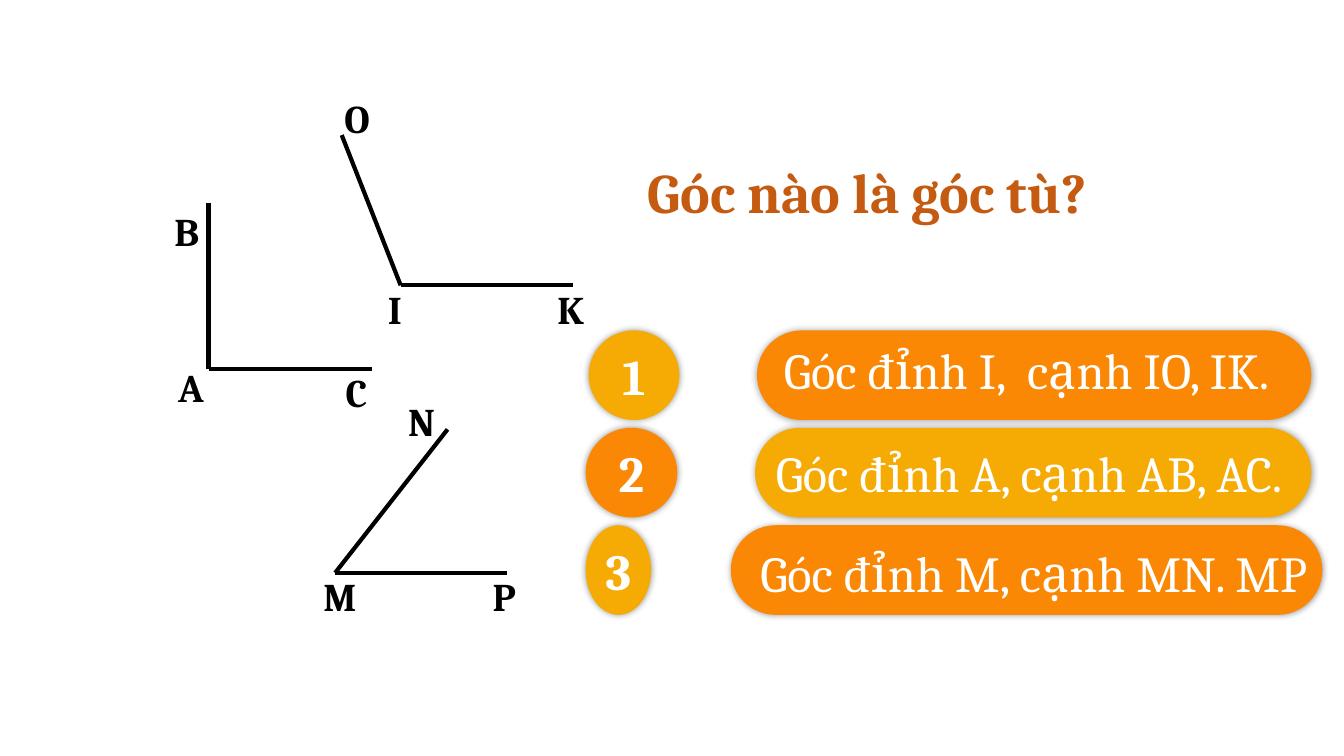
from lxml import etree
from pptx import Presentation
from pptx.dml.color import RGBColor
from pptx.enum import shapes as kinds, text as enums
from pptx.oxml.ns import qn
from pptx.util import Pt

FONT = "Cambria"
BLACK, WHITE, BROWN = "000000", "FFFFFF", "C55A11"
GOLD, ORANGE = "F6AB04", "FA8804"
TOP, STEP, HIGH = 236, 69.6, 64

# Each angle: arm end, vertex, arm end; then letter and its place
ANGLES = [
    ([(149, 144.7), (149, 263.7), (265.7, 263.7)],
     [("B", 117.4, 144.7), ("A", 120.2, 256.3), ("C", 239.8, 259.2)]),
    ([(319.7, 306.7), (239.4, 409.2), (362.2, 409.2)],
     [("N", 284.4, 280.1), ("M", 223.9, 405.4), ("P", 344.9, 405.4)]),
    ([(244.1, 96.5), (286.2, 203.8), (409, 203.8)],
     [("O", 239, 64.1), ("I", 270, 200.2), ("K", 391, 200.2)]),
]

# Each choice: badge left and width, pill left and width,
# text left, top and width, words
CHOICES = [
    (420.5, 64.8, 540.7, 396, 549.4, 239, 367.9, "Góc đỉnh I,  cạnh IO, IK."),
    (418.3, 65.5, 539.3, 397.4, 540.7, 312.5, 388.8, "Góc đỉnh A, cạnh AB, AC."),
    (418.3, 46.8, 522, 422.6, 535.7, 383.8, 405.4, "Góc đỉnh M, cạnh MN. MP"),
]


def color(code):
    return RGBColor.from_string(code)


def write(frame, words, size, code, bold=True, center=True):
    para = frame.paragraphs[0]
    para.text = words
    para.alignment = enums.PP_ALIGN.CENTER if center else enums.PP_ALIGN.LEFT
    font = para.font
    font.name, font.size, font.bold = FONT, Pt(size), bold
    font.color.rgb = color(code)


def label(parent, box, words, size, code, wrap=True, **style):
    frame = parent.add_textbox(*map(Pt, box)).text_frame
    frame.word_wrap = wrap
    frame.auto_size = enums.MSO_AUTO_SIZE.SHAPE_TO_FIT_TEXT
    write(frame, words, size, code, **style)
    return frame


def glow(shape):
    """Put a soft, centred shadow behind a shape."""
    shape.shadow.inherit = False
    effects = shape._element.spPr.find(qn("a:effectLst"))
    outer = etree.SubElement(effects, qn("a:outerShdw"), blurRad=str(Pt(5)),
                             dist="0", dir="0", algn="ctr", rotWithShape="0")
    tint = etree.SubElement(outer, qn("a:srgbClr"), val=BLACK)
    etree.SubElement(tint, qn("a:alpha"), val="40000")


def blob(parent, kind, box, code):
    shape = parent.add_shape(kind, *map(Pt, box))
    shape.fill.solid()
    shape.fill.fore_color.rgb = color(code)
    shape.line.fill.background()
    glow(shape)
    return shape


def arm(parent, start, end):
    line = parent.add_connector(kinds.MSO_CONNECTOR.STRAIGHT,
                                *map(Pt, (*start, *end)))
    line.line.width = Pt(3)
    line.line.color.rgb = color(BLACK)
    etree.SubElement(line._element.spPr, qn("a:effectLst"))


def angle(parent, points, letters):
    for start, end in zip(points, points[1:]):
        arm(parent, start, end)
    for letter, left, top in letters:
        label(parent, (left, top, 28.8, 41), letter, 28, BLACK, center=False)


def choice(parent, index, badge, pill):
    tints = (GOLD, ORANGE) if index % 2 == 0 else (ORANGE, GOLD)
    top = TOP + index * STEP
    disc = blob(parent, kinds.MSO_SHAPE.OVAL,
                (badge[0], top, badge[1], HIGH), tints[0])
    disc.text_frame.vertical_anchor = enums.MSO_ANCHOR.MIDDLE
    write(disc.text_frame, str(index + 1), 36, WHITE)
    bar = blob(parent, kinds.MSO_SHAPE.ROUNDED_RECTANGLE,
               (pill[0], top, pill[1], HIGH), tints[1])
    bar.adjustments[0] = 0.5


def main():
    deck = Presentation()
    deck.slide_width, deck.slide_height = Pt(960), Pt(540)
    slide = deck.slides.add_slide(deck.slide_layouts[6])
    canvas = slide.shapes

    # Question
    title = label(canvas, (418.3, 109.4, 402.5, 54), "Góc nào là góc tù?",
                  40, BROWN)
    title.margin_left = title.margin_right = Pt(5)
    title.margin_top = title.margin_bottom = Pt(2.9)

    # Numbered badges and pills
    for index, row in enumerate(CHOICES):
        choice(canvas.add_group_shape().shapes, index, row[:2], row[2:4])

    # Angles with their letters
    for points, letters in ANGLES:
        angle(canvas.add_group_shape().shapes, points, letters)

    # Answer texts
    for *_, left, top, width, words in CHOICES:
        label(canvas, (left, top, width, 51), words, 36, WHITE,
              wrap=False, bold=False)

    deck.save("out.pptx")


if __name__ == "__main__":
    main()
